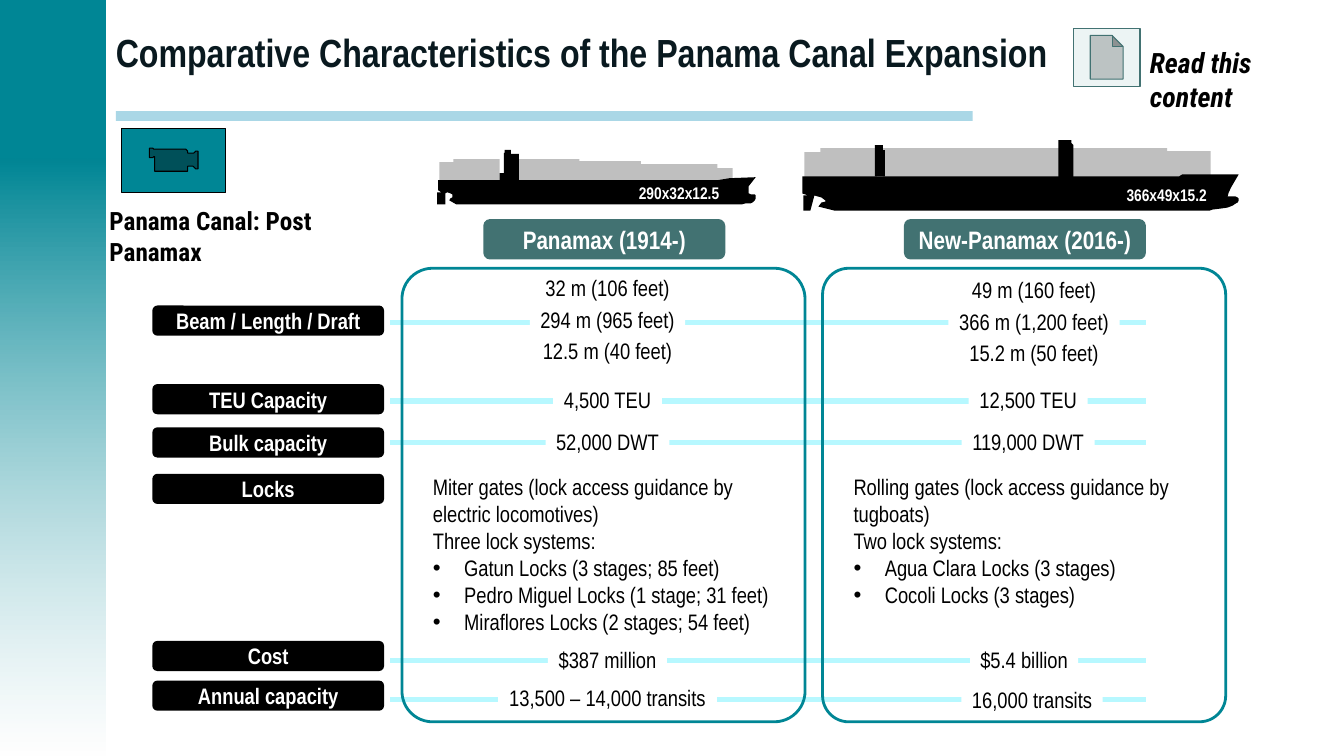
import pptx
import pptx.dml.color
import pptx.enum.dml
import pptx.enum.shapes
import pptx.enum.text
import pptx.oxml
import pptx.oxml.ns
import pptx.util
from lxml import etree

Cm = pptx.util.Cm
Pt = pptx.util.Pt
SHAPE = pptx.enum.shapes.MSO_SHAPE
ALIGN = pptx.enum.text.PP_ALIGN
ANCHOR = pptx.enum.text.MSO_ANCHOR
qn = pptx.oxml.ns.qn

COLORS = {"teal": "008695", "white": "FFFFFF", "black": "000000", "rule": "AAD7E6",
          "guide": "B7F8FF", "title": "09191F", "header": "427272", "cargo": "BFBFBF",
          "button": "ECF4F4"}
NARROW, ROBOTO = "Arial Narrow", "Roboto Condensed"
SHIP_UNIT = Cm(0.0254)

ROWS = [("Beam / Length / Draft", 0, 0.43), ("TEU Capacity", 1.98, 2.41),
        ("Bulk capacity", 3.07, 3.45), ("Locks", 4.24, None),
        ("Cost", 8.45, 8.94), ("Annual capacity", 9.45, 9.93)]

COLUMNS = [
    {"box": (10.13, 6.76, 10.16, 11.43), "corner": 0.076, "header": "Panamax (1914-)",
     "cells": [(["32 m (106 feet)", "294 m (965 feet)", "12.5 m (40 feet)"], 0.1, 0.03, 3.91),
               (["4,500 TEU"], 0.1, 2.84, 2.74), (["52,000 DWT"], 0.1, 3.91, 3.12),
               (["$387 million"], 0.1, 9.4, 3), (["13,500 – 14,000 transits"], 0.1, 10.36, 5.51)],
     "locks": (["Miter gates (lock access guidance by electric locomotives)", "Three lock systems:"],
               ["Gatun Locks (3 stages; 85 feet)", "Pedro Miguel Locks (1 stage; 31 feet)",
                "Miraflores Locks (2 stages; 54 feet)"])},
    {"box": (20.73, 6.76, 10.16, 11.43), "corner": 0.065, "header": "New-Panamax (2016-)",
     "cells": [(["49 m (160 feet)", "366 m (1,200 feet)", "15.2 m (50 feet)"], 0.25, 0.08, 4.32),
               (["12,500 TEU"], 0.1, 2.84, 3), (["119,000 DWT"], 0.1, 3.91, 3.35),
               (["$5.4 billion"], 0, 9.4, 2.72), (["16,000 transits"], 0.2, 10.41, 3.56)],
     "locks": (["Rolling gates (lock access guidance by tugboats)", "Two lock systems:"],
               ["Agua Clara Locks (3 stages)", "Cocoli Locks (3 stages)"])},
]

SHIPS = [
    {"origin": (11.02, 3.78), "size": "290x32x12.5", "size_at": (4.83, 0.71), "parts": [
        ("cargo", [(2, 30), (2, 12), (16, 12), (16, 9), (62, 9), (62, 30)]),
        ("cargo", [(80, 9), (141, 9), (141, 11), (202, 11), (202, 14), (278, 14), (278, 18),
                   (293, 18), (293, 30), (79, 30)]),
        ("black", [(316, 27), (309, 36), (309, 43), (311, 44), (315, 44), (316, 45), (316, 48),
                   (315, 50), (313, 52), (311, 53), (306, 53), (302, 54), (19, 54), (12, 50),
                   (13, 48), (15, 47), (15, 44), (13, 43), (10, 42), (8, 43), (8, 54), (0, 54),
                   (0, 42), (4, 42), (1, 40), (1, 30), (62, 30), (62, 23), (66, 23), (66, 3),
                   (67, 3), (67, 0), (73, 0), (73, 4), (81, 4), (81, 30), (278, 30), (290, 28)])]},
    {"origin": (20.22, 3.53), "size": "366x49x15.2", "size_at": (7.92, 0.99), "parts": [
        ("cargo", [(2, 38), (2, 12), (18, 12), (18, 8), (74, 8), (74, 38)]),
        ("cargo", [(79, 8), (256, 8), (256, 37), (80, 37)]),
        ("cargo", [(266, 8), (362, 8), (362, 11), (405, 11), (405, 37), (267, 37)]),
        ("black", [(433, 34), (426, 46), (423, 52), (422, 56), (430, 56), (432, 57), (433, 58),
                   (433, 60), (432, 62), (430, 63), (427, 65), (422, 67), (415, 68), (407, 69),
                   (404, 70), (32, 70), (16, 66), (19, 62), (23, 61), (23, 60), (19, 57), (12, 55),
                   (8, 70), (1, 70), (1, 55), (6, 55), (0, 53), (0, 36), (374, 36), (377, 34)]),
        ("black", [(72, 36), (72, 5), (80, 5), (80, 10), (82, 10), (82, 36)]),
        ("black", [(254, 37), (254, 0), (267, 0), (267, 3), (269, 5), (269, 37)])]},
]


def rgb(name):
    return pptx.dml.color.RGBColor.from_string(COLORS[name])


def paint(shape, fill=None, line=None, width=0.75):
    shape.shadow.inherit = False
    if fill:
        shape.fill.solid()
        shape.fill.fore_color.rgb = rgb(fill)
    else:
        shape.fill.background()
    if line:
        shape.line.color.rgb = rgb(line)
        shape.line.width = Pt(width)
    else:
        shape.line.fill.background()


def add_box(slide, kind, box, **style):
    shape = slide.shapes.add_shape(kind, *map(Cm, box))
    paint(shape, **style)
    return shape


def write(shape, lines, size, color="black", font=NARROW, bold=False, italic=False,
          align=ALIGN.LEFT, anchor=ANCHOR.TOP, wrap=False, gap=0, bullets_from=None):
    frame = shape.text_frame
    frame.word_wrap = wrap
    frame.vertical_anchor = anchor
    for index, line in enumerate(lines):
        paragraph = frame.paragraphs[0] if index == 0 else frame.add_paragraph()
        paragraph.text = line
        paragraph.alignment = align
        if index and gap:
            paragraph.space_before = Pt(gap)
        if bullets_from is not None and index >= bullets_from:
            properties = paragraph._p.get_or_add_pPr()
            properties.set("marL", str(Cm(0.79)))
            properties.set("indent", str(-Cm(0.79)))
            etree.SubElement(properties, qn("a:buFont")).set("typeface", "Arial")
            etree.SubElement(properties, qn("a:buChar")).set("char", "•")
        paragraph.font.name = font
        paragraph.font.size = Pt(size)
        paragraph.font.bold = bold
        paragraph.font.italic = italic
        paragraph.font.color.rgb = rgb(color)


def add_text(slide, box, lines, size, **style):
    write(slide.shapes.add_textbox(*map(Cm, box)), lines, size, **style)


def add_pill(slide, box, text, size, fill):
    pill = add_box(slide, SHAPE.ROUNDED_RECTANGLE, box, fill=fill)
    write(pill, [text], size, color="white", bold=True, align=ALIGN.CENTER, anchor=ANCHOR.MIDDLE)


def add_sidebar(slide, left, top, width, height):
    solid_height = 4.01
    add_box(slide, SHAPE.RECTANGLE, (left, top, width, solid_height), fill="teal")
    fade = add_box(slide, SHAPE.RECTANGLE,
                   (left, top + solid_height, width, height - solid_height))
    fade.fill.gradient()
    fade.fill.gradient_angle = 270
    for stop, position, color in zip(fade.fill.gradient_stops, (0, 1), ("teal", "white")):
        stop.position = position
        stop.color.rgb = rgb(color)
    last_color = fade._element.spPr.findall(".//" + qn("a:srgbClr"))[-1]
    etree.SubElement(last_color, qn("a:alpha")).set("val", "51000")


def add_header(slide, left, top, width, height):
    add_box(slide, SHAPE.RECTANGLE, (left + 0.25, top + 2.77, 21.59, 0.25), fill="rule")
    add_text(slide, (left, top, width, height),
             ["Comparative Characteristics of the Panama Canal Expansion"], 28,
             color="title", bold=True, anchor=ANCHOR.MIDDLE, wrap=True)


def add_row_labels(slide, left, top, width, height):
    for text, label_offset, guide_offset in ROWS:
        if guide_offset is not None:
            y = Cm(top + guide_offset)
            guide = slide.shapes.add_connector(pptx.enum.shapes.MSO_CONNECTOR.STRAIGHT,
                                               Cm(left + width + 0.15), y, Cm(left + 25.04), y)
            guide.line.color.rgb = rgb("guide")
            guide.line.width = Pt(4)
            etree.SubElement(guide._element.spPr, qn("a:effectLst"))
        add_pill(slide, (left, top + label_offset, width, height), text, 16, "black")


def add_ship(slide, ship):
    left, top = ship["origin"]
    for color, points in ship["parts"]:
        builder = slide.shapes.build_freeform(*points[0], scale=SHIP_UNIT)
        builder.add_line_segments(points[1:], close=True)
        paint(builder.convert_to_shape(Cm(left), Cm(top)), fill=color)
    x, y = ship["size_at"]
    add_text(slide, (left + x, top + y, 2.57, 0.76), [ship["size"]], 12,
             color="white", bold=True)


def add_column(slide, column):
    left, top, width, height = column["box"]
    add_pill(slide, (left + 2.05, top - 1.24, 6.1, 1.02), column["header"], 18, "header")
    for lines, shift, offset, cell_width in column["cells"]:
        cell_height = 2.59 if len(lines) > 1 else 0.94
        cell = add_box(slide, SHAPE.RECTANGLE,
                       (left + width / 2 + shift - cell_width / 2, top + offset,
                        cell_width, cell_height), fill="white")
        write(cell, lines, 16, align=ALIGN.CENTER, gap=3.2)
    plain, bulleted = column["locks"]
    add_text(slide, (left + 0.53, top + 5.05, 9.12, 4.37), plain + bulleted, 16,
             wrap=True, bullets_from=len(plain))
    frame = add_box(slide, SHAPE.ROUNDED_RECTANGLE, column["box"], line="teal", width=2)
    frame.adjustments[0] = column["corner"]


def add_content_link(slide, left, top):
    add_box(slide, SHAPE.ACTION_BUTTON_DOCUMENT, (left, top, 1.68, 1.47),
            fill="button", line="header")
    add_text(slide, (left + 1.68, top + 0.31, 4.72, 1.12), ["Read this content"], 20,
             font=ROBOTO, bold=True, italic=True, wrap=True)


def add_movie_link(slide, left, top):
    add_box(slide, SHAPE.ACTION_BUTTON_MOVIE, (left, top, 2.62, 1.63), fill="teal", line="black")
    add_text(slide, (left - 0.56, top + 1.83, 6.88, 1.02), ["Panama Canal: Post Panamax"], 18,
             font=ROBOTO, bold=True, wrap=True)


def main():
    presentation = pptx.Presentation()
    presentation.slide_width = Cm(33.87)
    presentation.slide_height = Cm(19.05)
    slide = presentation.slides.add_slide(presentation.slide_layouts[6])
    add_sidebar(slide, -0.05, -0.02, 2.72, 19.07)
    add_header(slide, 2.67, 0.03, 30.43, 2.54)
    add_row_labels(slide, 3.84, 7.7, 5.84, 0.76)
    for ship in SHIPS:
        add_ship(slide, ship)
    for column in COLUMNS:
        add_column(slide, column)
    add_content_link(slide, 27.05, 0.71)
    add_movie_link(slide, 3.07, 3.23)
    presentation.save("out.pptx")


if __name__ == "__main__":
    main()
